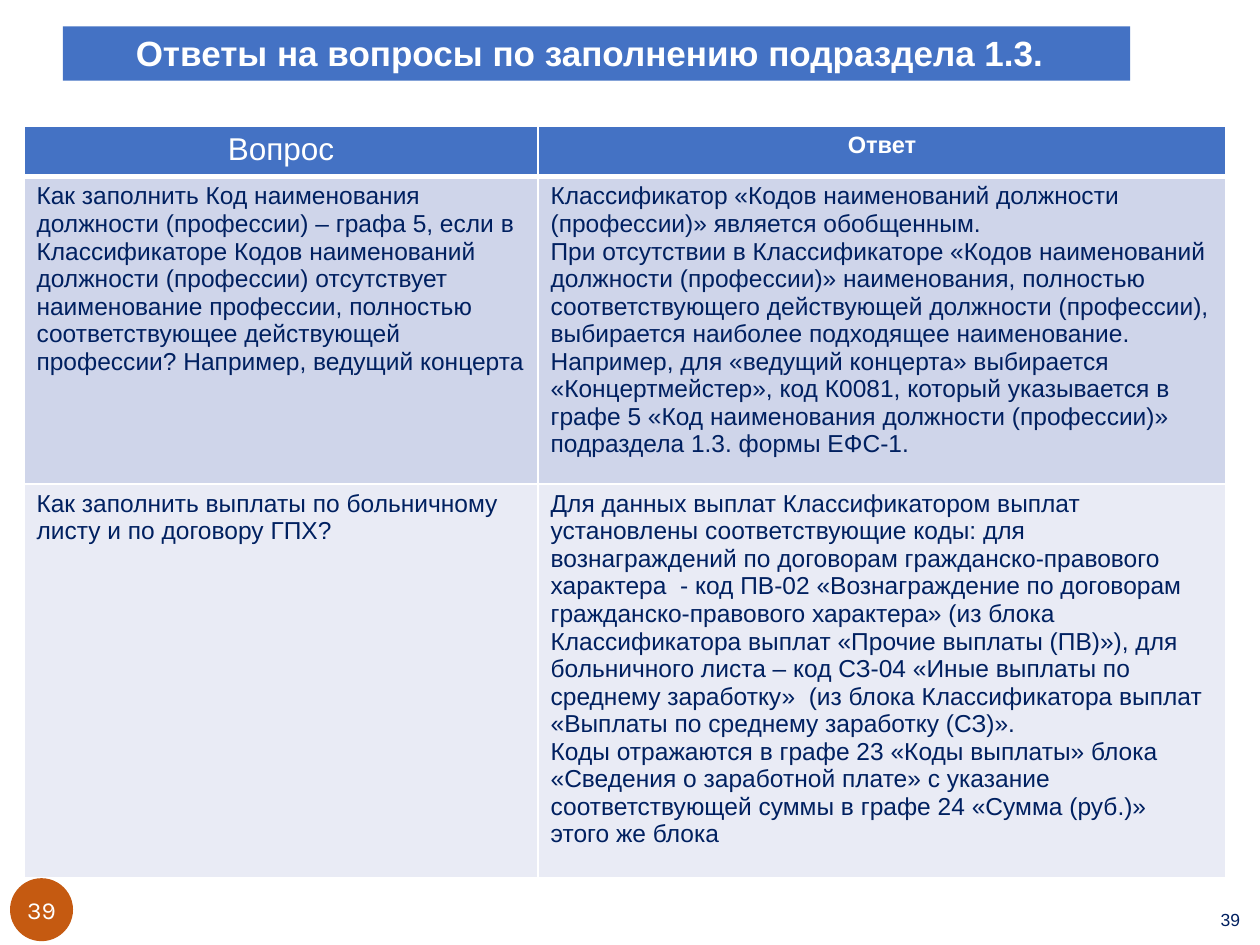
from lxml import etree
from pptx import Presentation
from pptx.dml.color import RGBColor
from pptx.enum import shapes, text
from pptx.oxml.ns import qn
from pptx.util import Inches, Pt

BLUE, NAVY, WHITE, RUST = "4472C4", "002060", "FFFFFF", "C55A11"
BANDS = ["CFD5EA", "E9EBF5"]
COLS = [4.08, 5.46]
ROWS = [0.4, 2.44, 3.13]
MID = text.PP_ALIGN.CENTER
LEFT = text.PP_ALIGN.LEFT
NUM = "39"

HEADS = [("Вопрос", 18, False), ("Ответ", 13.5, True)]
BODY = [
    [
        ["Как заполнить Код наименования должности (профессии) – графа 5, если в "
         "Классификаторе Кодов наименований должности (профессии) отсутствует "
         "наименование профессии, полностью соответствующее действующей профессии? "
         "Например, ведущий концерта"],
        ["Классификатор «Кодов наименований должности (профессии)» является обобщенным.",
         "При отсутствии в Классификаторе «Кодов наименований должности (профессии)» "
         "наименования, полностью соответствующего действующей должности (профессии), "
         "выбирается наиболее подходящее наименование. Например, для «ведущий концерта» "
         "выбирается «Концертмейстер», код К0081, который указывается в графе 5 «Код "
         "наименования должности (профессии)» подраздела 1.3. формы ЕФС-1."],
    ],
    [
        ["Как заполнить выплаты по больничному лиcту и по договору ГПХ?"],
        ["Для данных выплат Классификатором выплат установлены соответствующие коды: для "
         "вознаграждений по договорам гражданско-правового характера  - код ПВ-02 "
         "«Вознаграждение по договорам гражданско-правового характера» (из блока "
         "Классификатора выплат «Прочие выплаты (ПВ)»), для больничного листа – код СЗ-04 "
         "«Иные выплаты по среднему заработку»  (из блока Классификатора выплат «Выплаты "
         "по среднему заработку (СЗ)».",
         "Коды отражаются в графе 23 «Коды выплаты» блока «Сведения о заработной плате» "
         "с указание соответствующей суммы в графе 24 «Сумма (руб.)»  этого же блока"],
    ],
]


def rgb(code):
    return RGBColor.from_string(code)


def write(frame, paras, size, color, bold=False, align=MID, font="Arial"):
    for i, line in enumerate(paras):
        para = frame.paragraphs[0] if i == 0 else frame.add_paragraph()
        para.alignment = align
        run = para.add_run()
        run.text = line
        run.font.size, run.font.bold, run.font.name = Pt(size), bold, font
        run.font.color.rgb = rgb(color)


def pad(frame, gap, anchor):
    frame.word_wrap = True
    frame.auto_size = text.MSO_AUTO_SIZE.NONE
    frame.vertical_anchor = anchor
    frame.margin_left = frame.margin_right = Inches(gap)
    frame.margin_top = frame.margin_bottom = Inches(gap)


def add_shape(slide, kind, box, fill):
    shape = slide.shapes.add_shape(kind, *map(Inches, box))
    shape.shadow.inherit = False
    shape.fill.solid()
    shape.fill.fore_color.rgb = rgb(fill)
    shape.line.fill.background()
    return shape


def add_title(slide):
    bar = add_shape(slide, shapes.MSO_SHAPE.RECTANGLE, (0.5, 0.21, 8.47, 0.43), BLUE)
    title = slide.shapes.title
    # The bar goes behind the title
    title._element.addprevious(bar._element)
    title.left, title.top, title.width, title.height = map(Inches, (0.5, 0.21, 8.44, 0.41))
    pad(title.text_frame, 0.04, text.MSO_ANCHOR.TOP)
    write(title.text_frame, ["Ответы на вопросы по заполнению подраздела 1.3. "], 20, WHITE, True)


def style_cell(cell, fill, base=1):
    props = cell._tc.get_or_add_tcPr()
    for side, width in (("L", 1), ("R", 1), ("T", 1), ("B", base)):
        line = etree.SubElement(props, qn("a:ln" + side), w=str(Pt(width)))
        solid = etree.SubElement(line, qn("a:solidFill"))
        etree.SubElement(solid, qn("a:srgbClr"), val=WHITE)
    cell.fill.solid()
    cell.fill.fore_color.rgb = rgb(fill)


def add_table(slide):
    box = map(Inches, (0.19, 1, sum(COLS), sum(ROWS)))
    table = slide.shapes.add_table(len(ROWS), len(COLS), *box).table
    for col, width in zip(table.columns, COLS):
        col.width = Inches(width)
    for row, height in zip(table.rows, ROWS):
        row.height = Inches(height)
    for c, (head, size, bold) in enumerate(HEADS):
        cell = table.cell(0, c)
        style_cell(cell, BLUE, 3)
        write(cell.text_frame, [head], size, WHITE, bold)
    for r, (row, band) in enumerate(zip(BODY, BANDS), 1):
        for c, paras in enumerate(row):
            cell = table.cell(r, c)
            style_cell(cell, band)
            write(cell.text_frame, paras, 14, NAVY, align=LEFT)


def add_number(slide):
    box = slide.shapes.add_textbox(*map(Inches, (9.57, 7.14, 0.39, 0.31)))
    pad(box.text_frame, 0.07, text.MSO_ANCHOR.MIDDLE)
    write(box.text_frame, [NUM], 10, NAVY)


def add_badge(slide):
    badge = add_shape(slide, shapes.MSO_SHAPE.OVAL, (0.08, 6.97, 0.5, 0.5), RUST)
    pad(badge.text_frame, 0, text.MSO_ANCHOR.MIDDLE)
    write(badge.text_frame, [NUM], 14, WHITE, font="Karla")


def main():
    deck = Presentation()
    deck.slide_width, deck.slide_height = Inches(10), Inches(7.5)
    slide = deck.slides.add_slide(deck.slide_layouts[5])
    add_title(slide)
    add_number(slide)
    add_table(slide)
    add_badge(slide)
    deck.save("out.pptx")


if __name__ == "__main__":
    main()
